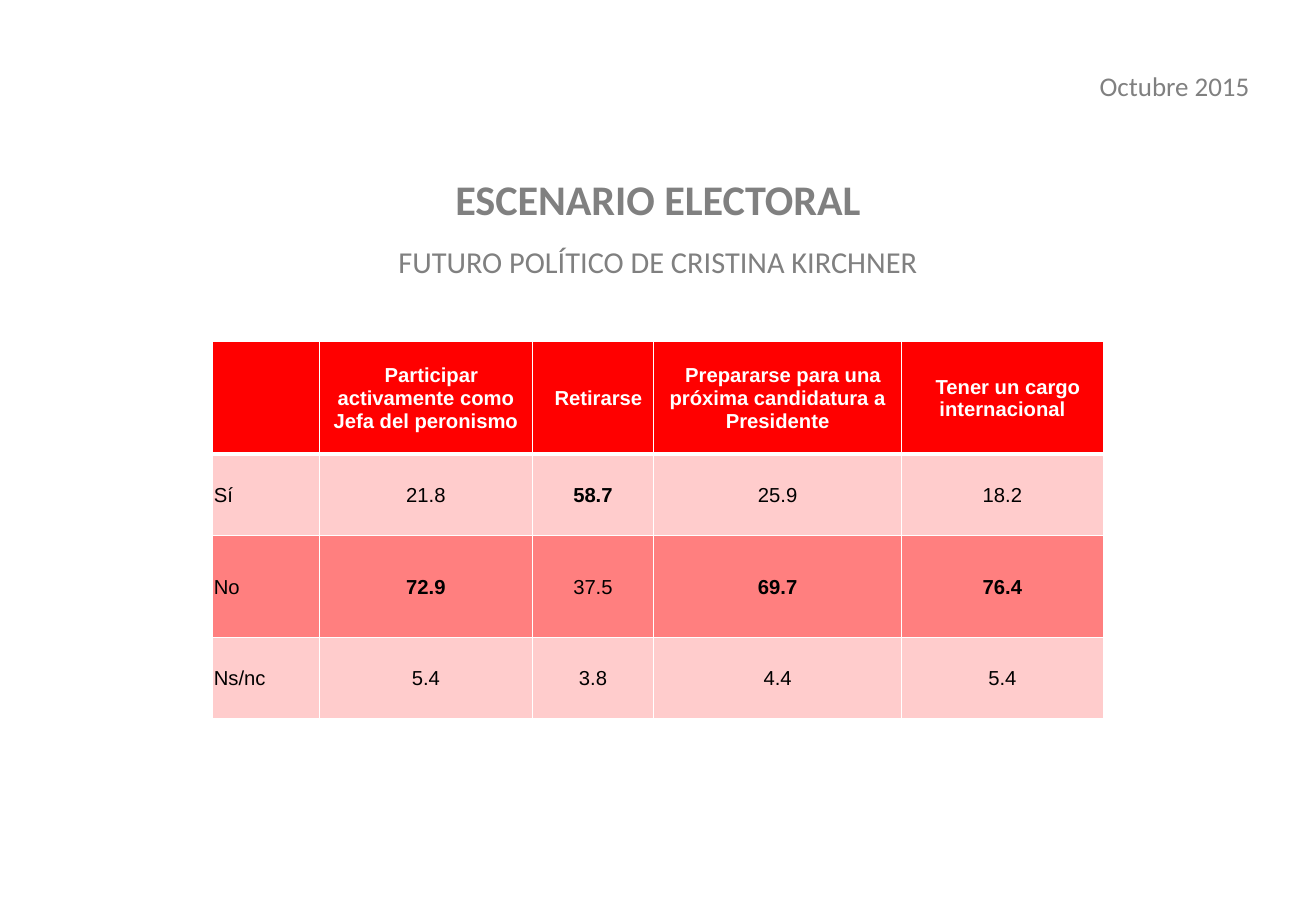
from dataclasses import dataclass

import pptx
import pptx.dml.color
import pptx.enum.text
import pptx.oxml
import pptx.oxml.ns
import pptx.util

ALIGN = pptx.enum.text.PP_ALIGN
ANCHOR = pptx.enum.text.MSO_ANCHOR
PX = 9144  # EMU per px, 100 px to the inch


@dataclass(frozen=True)
class Theme:
    red: str = "FF0000"
    white: str = "FFFFFF"
    black: str = "000000"
    grey: str = "808080"
    heading_font: str = "Calibri"
    table_font: str = "Arial"
    title_size: int = 25
    subtitle_size: int = 18
    date_size: int = 16
    table_size: int = 12
    rule: int = 1
    header_rule: int = 3


@dataclass(frozen=True)
class Option:
    label: str
    width: int
    values: tuple[float, ...]


@dataclass(frozen=True)
class Answer:
    label: str
    height: int
    opacity: int


THEME = Theme()
LABEL_WIDTH, HEADER_HEIGHT = 88, 93
OPTIONS = [
    Option("Participar activamente como Jefa del peronismo", 175, (21.8, 72.9, 5.4)),
    Option("Retirarse", 100, (58.7, 37.5, 3.8)),
    Option("Prepararse para una próxima candidatura a Presidente", 204, (25.9, 69.7, 4.4)),
    Option("Tener un cargo internacional", 166, (18.2, 76.4, 5.4)),
]
ANSWERS = [Answer("Sí", 67, 20), Answer("No", 84, 50), Answer("Ns/nc", 67, 20)]


def px(n: int) -> pptx.util.Emu:
    return pptx.util.Emu(n * PX)


def add_run(p, text: str, font: str, size: int, color: str, bold: bool = False) -> None:
    r = p.add_run()
    r.text = text
    r.font.name = font
    r.font.size = pptx.util.Pt(size)
    r.font.bold = bold
    r.font.color.rgb = pptx.dml.color.RGBColor.from_string(color)


def style_cell(cell, opacity: int, top: int, bottom: int) -> None:
    """Fill, borders, insets and anchor of one cell."""
    cell.margin_left = cell.margin_right = cell.margin_top = px(1)
    cell.margin_bottom = 0
    cell.vertical_anchor = ANCHOR.MIDDLE
    cell.fill.solid()
    cell.fill.fore_color.rgb = pptx.dml.color.RGBColor.from_string(THEME.red)
    ns = pptx.oxml.ns.nsdecls("a")
    tc_pr = cell._tc.get_or_add_tcPr()
    if opacity < 100:
        color = tc_pr.find(".//" + pptx.oxml.ns.qn("a:srgbClr"))
        color.append(pptx.oxml.parse_xml(f'<a:alpha {ns} val="{opacity * 1000}"/>'))
    sides = {"L": THEME.rule, "R": THEME.rule, "T": top, "B": bottom}
    for i, (side, width) in enumerate(sides.items()):
        tc_pr.insert(i, pptx.oxml.parse_xml(
            f'<a:ln{side} {ns} w="{pptx.util.Pt(width)}"><a:solidFill>'
            f'<a:srgbClr val="{THEME.white}"/></a:solidFill></a:ln{side}>'))


def write_cell(cell, text: str, color: str, bold: bool, align: ALIGN):
    p = cell.text_frame.paragraphs[0]
    p.alignment = align
    add_run(p, text, THEME.table_font, THEME.table_size, color, bold)
    return p


def add_results(slide) -> None:
    widths = [LABEL_WIDTH] + [o.width for o in OPTIONS]
    heights = [HEADER_HEIGHT] + [a.height for a in ANSWERS]
    table = slide.shapes.add_table(
        len(heights), len(widths), px(175), px(281), px(sum(widths)), px(sum(heights))).table
    table.horz_banding = False
    for column, width in zip(table.columns, widths):
        column.width = px(width)
    for row, height in zip(table.rows, heights):
        row.height = px(height)

    # Header row
    for c in range(len(widths)):
        style_cell(table.cell(0, c), 100, THEME.rule, THEME.header_rule)
    for c, option in enumerate(OPTIONS, 1):
        p = write_cell(table.cell(0, c), option.label, THEME.white, True, ALIGN.CENTER)
        p._p.get_or_add_pPr().set("indent", str(px(9)))

    # Answer rows, with the leading answer of each option in bold
    for i, answer in enumerate(ANSWERS):
        top = THEME.header_rule if i == 0 else THEME.rule
        for c in range(len(widths)):
            style_cell(table.cell(i + 1, c), answer.opacity, top, THEME.rule)
        write_cell(table.cell(i + 1, 0), answer.label, THEME.black, False, ALIGN.LEFT)
        for c, option in enumerate(OPTIONS, 1):
            value = option.values[i]
            write_cell(table.cell(i + 1, c), f"{value:.1f}", THEME.black,
                       value == max(option.values), ALIGN.CENTER)


def add_title(slide) -> None:
    sp = slide.shapes.title
    sp.left, sp.top, sp.width, sp.height = px(0), px(149), px(1083), px(164)
    tf = sp.text_frame
    tf.auto_size = pptx.enum.text.MSO_AUTO_SIZE.NONE
    tf.vertical_anchor = ANCHOR.BOTTOM
    tf.margin_bottom = px(83)
    title, subtitle = tf.paragraphs[0], tf.add_paragraph()
    for p in (title, subtitle):
        p.alignment = ALIGN.CENTER
        p.line_spacing = 0.8
        p.space_before = pptx.util.Pt(0)
    subtitle.space_before = pptx.util.Pt(16)
    add_run(title, "ESCENARIO ELECTORAL", THEME.heading_font, THEME.title_size, THEME.grey, True)
    add_run(subtitle, "FUTURO POLÍTICO DE CRISTINA KIRCHNER", THEME.heading_font,
            THEME.subtitle_size, THEME.grey)


def add_date(slide) -> None:
    tf = slide.shapes.add_textbox(px(857), px(52), px(181), px(37)).text_frame
    tf.word_wrap = True
    p = tf.paragraphs[0]
    p.alignment = ALIGN.RIGHT
    add_run(p, "Octubre 2015", THEME.heading_font, THEME.date_size, THEME.grey)


def main() -> None:
    prs = pptx.Presentation()
    prs.slide_width, prs.slide_height = px(1083), px(750)
    slide = prs.slides.add_slide(prs.slide_layouts.get_by_name("Title Only"))
    add_results(slide)
    add_title(slide)
    add_date(slide)
    prs.save("out.pptx")


if __name__ == "__main__":
    main()
